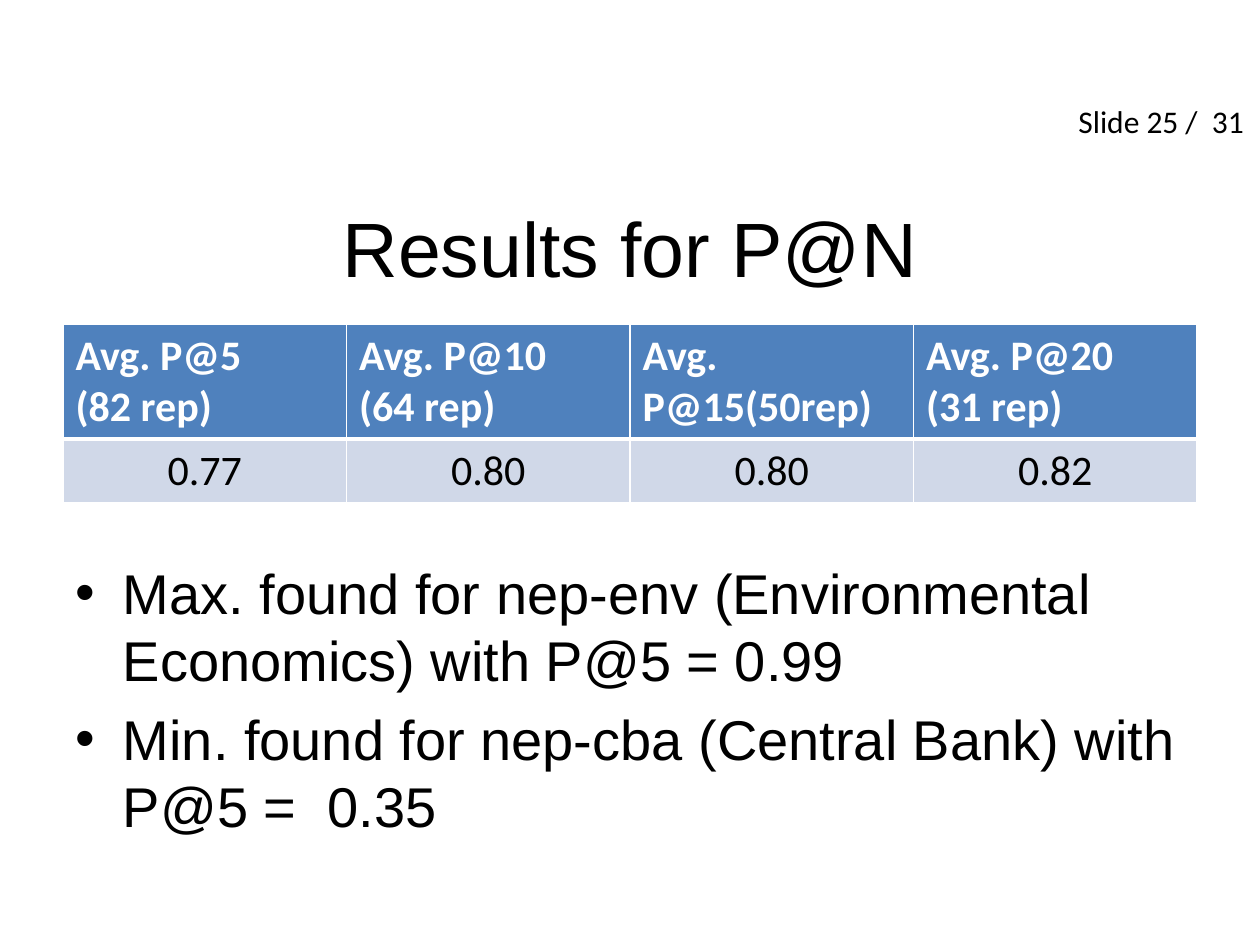
"""Build the slide reporting average precision at N."""

from dataclasses import dataclass
from typing import Any, NamedTuple

import lxml.etree
import pptx
import pptx.dml.color
import pptx.enum.text
import pptx.oxml.ns
import pptx.util

Cm = pptx.util.Cm
Pt = pptx.util.Pt
Align = pptx.enum.text.PP_ALIGN
Anchor = pptx.enum.text.MSO_ANCHOR
AutoSize = pptx.enum.text.MSO_AUTO_SIZE


@dataclass(frozen=True)
class TextStyle:
    font: str
    size: float
    color: str
    bold: bool = False


@dataclass(frozen=True)
class Theme:
    title: TextStyle = TextStyle("Arial", 44, "000000")
    bullet: TextStyle = TextStyle("Arial", 32, "000000")
    header: TextStyle = TextStyle("Calibri", 24, "FFFFFF", True)
    score: TextStyle = TextStyle("Calibri", 24, "000000")
    counter: TextStyle = TextStyle("Calibri", 18, "000000")
    header_fill: str = "4F81BD"
    score_fill: str = "D0D8E8"
    border: str = "FFFFFF"


class Box(NamedTuple):
    left: float
    top: float
    width: float
    height: float

    def lengths(self) -> list[int]:
        return [Cm(value) for value in self]


class Precision(NamedTuple):
    heading: str
    score: str


THEME = Theme()
TITLE_BOX = Box(1.27, 3.38, 22.86, 3.18)
TABLE_BOX = Box(1.27, 6.53, 22.86, 2.08)
FINDINGS_BOX = Box(1.27, 11.13, 22.86, 5.89)
COUNTER_BOX = Box(21.49, 1.93, 3.89, 1.02)

PRECISIONS = [
    Precision("Avg. P@5\n(82 rep)", "0.77"),
    Precision("Avg. P@10\n(64 rep)", "0.80"),
    Precision("Avg. P@15(50rep)", "0.80"),
    Precision("Avg. P@20\n(31 rep)", "0.82"),
]
FINDINGS = [
    "Max. found for nep-env (Environmental Economics) with P@5 = 0.99",
    "Min. found for nep-cba (Central Bank) with P@5 =  0.35",
]


def rgb(color: str) -> pptx.dml.color.RGBColor:
    return pptx.dml.color.RGBColor.from_string(color)


def write(frame: Any, text: str, style: TextStyle, align: Any = Align.LEFT) -> None:
    frame.text = text
    for paragraph in frame.paragraphs:
        paragraph.alignment = align
        for run in paragraph.runs:
            run.font.name = style.font
            run.font.size = Pt(style.size)
            run.font.bold = style.bold
            run.font.color.rgb = rgb(style.color)


def place(shape: Any, box: Box) -> None:
    shape.left, shape.top, shape.width, shape.height = box.lengths()


def add_borders(cell: Any, bottom: float) -> None:
    qn = pptx.oxml.ns.qn
    properties = cell._tc.get_or_add_tcPr()
    for side, width in {"lnL": 1, "lnR": 1, "lnT": 1, "lnB": bottom}.items():
        line = lxml.etree.SubElement(properties, qn(f"a:{side}"), w=str(Pt(width)))
        fill = lxml.etree.SubElement(line, qn("a:solidFill"))
        lxml.etree.SubElement(fill, qn("a:srgbClr"), val=THEME.border)


def fill_cell(
    cell: Any, text: str, style: TextStyle, fill: str, align: Any, bottom: float
) -> None:
    write(cell.text_frame, text, style, align)
    add_borders(cell, bottom)
    cell.fill.solid()
    cell.fill.fore_color.rgb = rgb(fill)


def add_precision_table(slide: Any, precisions: list[Precision]) -> None:
    frame = slide.shapes.add_table(2, len(precisions), *TABLE_BOX.lengths())
    table = frame.table
    for column, precision in enumerate(precisions):
        fill_cell(table.cell(0, column), precision.heading, THEME.header,
                  THEME.header_fill, Align.LEFT, 3)
        fill_cell(table.cell(1, column), precision.score, THEME.score,
                  THEME.score_fill, Align.CENTER, 1)


def add_findings(body: Any, findings: list[str]) -> None:
    place(body, FINDINGS_BOX)
    write(body.text_frame, "\n".join(findings), THEME.bullet)
    body.text_frame.auto_size = AutoSize.NONE
    body.text_frame.paragraphs[0].space_before = Pt(0)


def add_title(title: Any, text: str) -> None:
    place(title, TITLE_BOX)
    write(title.text_frame, text, THEME.title, Align.CENTER)
    title.text_frame.vertical_anchor = Anchor.MIDDLE
    title.text_frame.auto_size = AutoSize.NONE


def add_counter(slide: Any, text: str) -> None:
    counter = slide.shapes.add_textbox(*COUNTER_BOX.lengths())
    write(counter.text_frame, text, THEME.counter)
    counter.text_frame.word_wrap = False
    counter.text_frame.auto_size = AutoSize.SHAPE_TO_FIT_TEXT


def main() -> None:
    deck = pptx.Presentation()
    deck.slide_width, deck.slide_height = Cm(25.4), Cm(19.05)
    slide = deck.slides.add_slide(deck.slide_layouts[1])
    add_title(slide.shapes.title, "Results for P@N")
    add_precision_table(slide, PRECISIONS)
    add_findings(slide.placeholders[1], FINDINGS)
    add_counter(slide, "Slide 25 /  31")
    deck.save("out.pptx")


if __name__ == "__main__":
    main()
